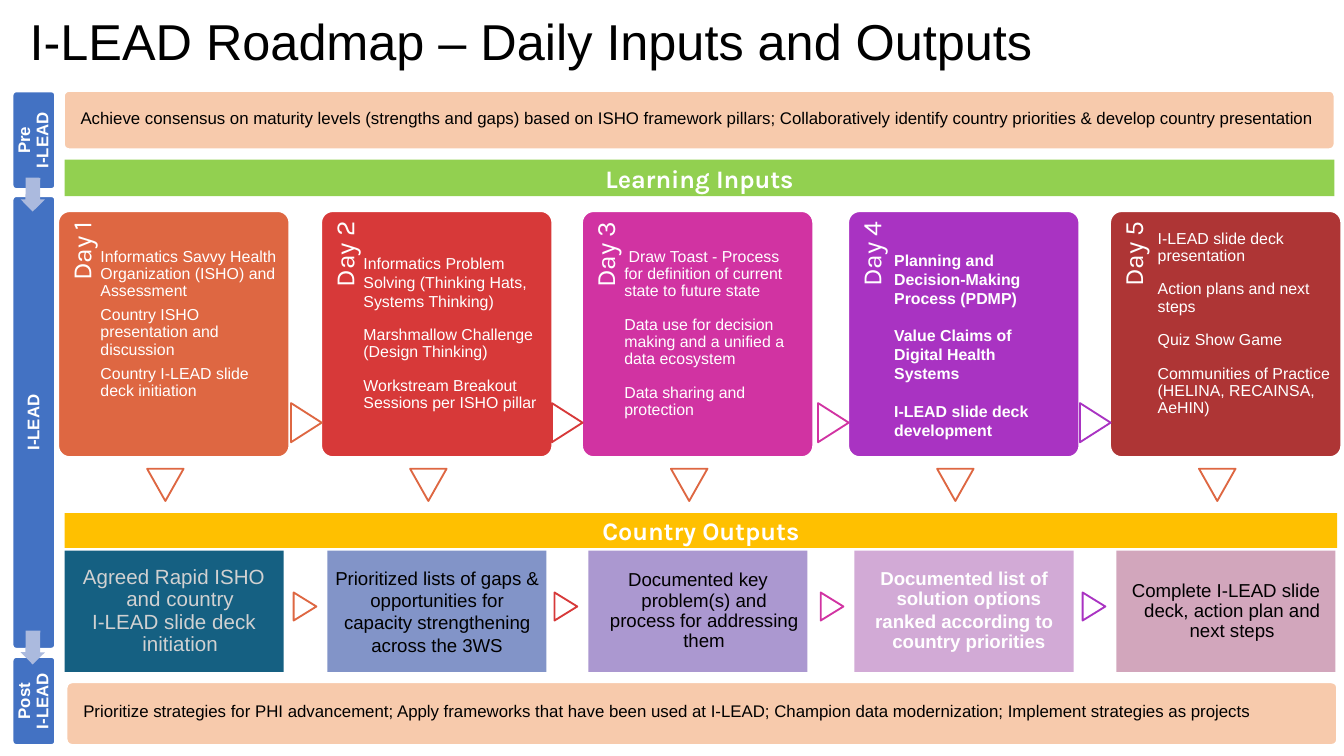
from dataclasses import dataclass

from pptx import Presentation
from pptx.dml.color import RGBColor
from pptx.enum import shapes, text
from pptx.util import Cm, Pt

WHITE = RGBColor(0xFF, 0xFF, 0xFF)
BLACK = RGBColor(0, 0, 0)
GREY = RGBColor(0xD1, 0xD1, 0xD1)
GREEN = RGBColor(0x92, 0xD0, 0x50)
GOLD = RGBColor(0xFF, 0xC0, 0x00)
PEACH = RGBColor(0xF7, 0xCA, 0xAC)
BLUE = RGBColor(0x43, 0x72, 0xC3)
PALE_BLUE = RGBColor(0xAB, 0xBA, 0xDE)
ORANGE = RGBColor(0xDE, 0x67, 0x42)
RED = RGBColor(0xD7, 0x39, 0x39)
PINK = RGBColor(0xD1, 0x33, 0xA2)
PURPLE = RGBColor(0xA9, 0x33, 0xC2)
MAROON = RGBColor(0xAE, 0x35, 0x35)
TEAL = RGBColor(0x15, 0x60, 0x82)
PERIWINKLE = RGBColor(0x82, 0x94, 0xC8)
LAVENDER = RGBColor(0xAB, 0x98, 0xD0)
LILAC = RGBColor(0xD2, 0xAA, 0xD6)
ROSE = RGBColor(0xD2, 0xA6, 0xBC)

SHAPE = shapes.MSO_SHAPE
LEFT, CENTER, RIGHT = text.PP_ALIGN.LEFT, text.PP_ALIGN.CENTER, text.PP_ALIGN.RIGHT
TOP, MIDDLE = text.MSO_ANCHOR.TOP, text.MSO_ANCHOR.MIDDLE

CARD_TOP, CARD_WIDTH, CARD_HEIGHT = 3.99, 4.37, 4.65


@dataclass
class Day:
    left: float
    color: RGBColor
    inputs: list
    inputs_offset: float
    inputs_width: float
    inputs_middle: float
    inputs_format: dict
    output_color: RGBColor
    output: list
    output_format: dict


HANGING = dict(margin=0.23, indent=-0.23)
DAYS = [
    Day(1.1, ORANGE,
        ["Informatics Savvy Health Organization (ISHO) and Assessment",
         "Country ISHO presentation and discussion",
         "Country I-LEAD slide deck initiation"],
        0.8, 3.38, 6.13, dict(gap=3.9),
        TEAL, ["Agreed Rapid ISHO and country", "I-LEAD slide deck initiation"],
        dict(size=11, color=GREY, **HANGING)),
    Day(6.07, RED,
        ["Informatics Problem Solving (Thinking Hats, Systems Thinking)",
         "Marshmallow Challenge (Design Thinking)",
         "Workstream Breakout Sessions per ISHO pillar"],
        0.8, 3.3, 6.29, dict(gap=8.8, first_spacing=1),
        PERIWINKLE,
        ["Prioritized lists of gaps & opportunities for capacity strengthening across the 3WS"],
        dict(spacing=1)),
    Day(11, PINK,
        ["Draw Toast - Process for definition of current state to future state",
         "Data use for decision making and a unified a data ecosystem",
         "Data sharing and protection"],
        0.8, 3.3, 6.31, dict(gap=8.8, first_indent=0.08),
        LAVENDER, ["Documented key problem(s) and process for addressing them"],
        HANGING),
    Day(16.03, PURPLE,
        ["Planning and Decision-Making Process (PDMP)",
         "Value Claims of Digital Health Systems",
         "I-LEAD slide deck development"],
        0.87, 2.99, 6.52, dict(gap=9.8, spacing=1, bold=True),
        LILAC, ["Documented list of solution options", "ranked according to country priorities"],
        dict(color=WHITE, bold=True, gap=1.3, margin=0.18, indent=-0.18)),
    Day(20.98, MAROON,
        ["I-LEAD slide deck presentation", "Action plans and next steps",
         "Quiz Show Game", "Communities of Practice (HELINA, RECAINSA, AeHIN)"],
        0.9, 3.33, 6.12, dict(gap=8.8),
        ROSE, ["Complete I-LEAD slide deck, action plan and next steps"],
        HANGING),
]


def write(frame, paragraphs, *, size=10, color=BLACK, font="Arial", bold=False,
          align=CENTER, anchor=MIDDLE, insets=(0, 0, 0, 0), spacing=0.9,
          first_spacing=None, gap=0, margin=0, indent=0, first_indent=None):
    """Fill a frame; insets run left, top, right, bottom in cm, gap is in points."""
    frame.word_wrap = True
    frame.auto_size = text.MSO_AUTO_SIZE.NONE
    frame.vertical_anchor = anchor
    (frame.margin_left, frame.margin_top,
     frame.margin_right, frame.margin_bottom) = map(Cm, insets)
    for i, words in enumerate(paragraphs):
        paragraph = frame.paragraphs[0] if i == 0 else frame.add_paragraph()
        first = i == 0
        hang = first_indent if first and first_indent is not None else indent
        properties = paragraph._p.get_or_add_pPr()
        properties.set("marL", str(Cm(margin)))
        properties.set("indent", str(Cm(hang)))
        paragraph.alignment = align
        paragraph.line_spacing = float(first_spacing if first and first_spacing else spacing)
        paragraph.space_before = Pt(0 if first else gap)
        run = paragraph.add_run()
        run.text = words
        run.font.name, run.font.size, run.font.bold = font, Pt(size), bold
        run.font.color.rgb = color


def add_block(slide, kind, left, top, width, height, fill, *,
              line=None, line_width=1, rotation=0, radius=None):
    block = slide.shapes.add_shape(kind, Cm(left), Cm(top), Cm(width), Cm(height))
    block.shadow.inherit = False
    block.fill.solid()
    block.fill.fore_color.rgb = fill
    if line is None:
        block.line.fill.background()
    else:
        block.line.color.rgb = line
        block.line.width = Pt(line_width)
    block.rotation = rotation
    if radius is not None:
        block.adjustments[0] = radius
    return block


def add_sideways_block(slide, left, top, width, height, fill, **look):
    """Place a rounded block, given as it stands, whose text reads upwards."""
    return add_block(slide, SHAPE.ROUNDED_RECTANGLE,
                     left + (width - height) / 2, top + (height - width) / 2,
                     height, width, fill, line=WHITE, rotation=270, **look)


def add_triangle(slide, left, top, width, height, color, rotation):
    add_block(slide, SHAPE.FLOWCHART_EXTRACT, left, top, width, height, WHITE,
              line=color, rotation=rotation)


def add_title(slide):
    title = slide.shapes.title
    title.left, title.top, title.width, title.height = map(Cm, (0.38, 0.28, 22.66, 1.19))
    write(title.text_frame, ["I-LEAD Roadmap – Daily Inputs and Outputs"],
          size=27, align=LEFT, spacing=0.8, insets=(0.18, 0.1, 0.18, 0.1))


def add_heading_bar(slide, words, top, width, height, fill):
    bar = add_block(slide, SHAPE.RECTANGLE, 1.22, top, width, height, fill)
    write(bar.text_frame, [words], size=13.5, color=WHITE, font="Karla",
          bold=True, spacing=1)


def add_goal_band(slide, words, left, top, height):
    band = add_block(slide, SHAPE.ROUNDED_RECTANGLE, left, top, 24.05, height, PEACH,
                     line=WHITE, line_width=2, radius=0.1)
    write(band.text_frame, [words], size=9, align=LEFT, insets=(0.3, 0, 0.2, 0.05))


def add_phase(slide, lines, top, height):
    phase = add_sideways_block(slide, 0.22, top, 0.84, height, BLUE,
                               line_width=2, radius=0.1)
    write(phase.text_frame, lines, size=9, color=WHITE, bold=True)


def add_day(slide, number, day):
    card = add_sideways_block(slide, day.left, CARD_TOP, CARD_WIDTH, CARD_HEIGHT,
                              day.color, radius=0.05)
    write(card.text_frame, [f"Day {number}"], size=14.2, color=WHITE, font="Karla",
          align=RIGHT, anchor=TOP, insets=(0.94, 0.13, 0.13, 2.7))

    height = 4.6
    inputs = slide.shapes.add_textbox(
        Cm(day.left + day.inputs_offset), Cm(day.inputs_middle - height / 2),
        Cm(day.inputs_width), Cm(height))
    write(inputs.text_frame, day.inputs,
          **{"size": 8.5, "color": WHITE, "align": LEFT, **day.inputs_format})

    add_triangle(slide, day.left + 1.68, 8.86, 0.69, 0.61, ORANGE, 180)
    output = add_block(slide, SHAPE.RECTANGLE, day.left + 0.12, 10.41, 4.14, 2.29,
                       day.output_color)
    write(output.text_frame, day.output, insets=(0.13,) * 4, **day.output_format)


def main():
    deck = Presentation()
    deck.slide_width, deck.slide_height = Cm(25.4), Cm(14.29)
    slide = deck.slides.add_slide(deck.slide_layouts[5])
    add_title(slide)

    for number, day in enumerate(DAYS, 1):
        add_day(slide, number, day)
    for day, following in zip(DAYS, DAYS[1:]):
        add_triangle(slide, following.left - 0.65, 7.7, 0.74, 0.58, day.color, 90)
        add_triangle(slide, following.left - 0.57, 11.25, 0.53, 0.43, day.color, 90)

    add_heading_bar(slide, "Learning Inputs", 3.02, 24, 0.69, GREEN)
    add_heading_bar(slide, "Country Outputs", 9.7, 24.05, 0.66, GOLD)
    add_goal_band(slide, "Achieve consensus on maturity levels (strengths and gaps) based on "
                  "ISHO framework pillars; Collaboratively identify country priorities & "
                  "develop country presentation", 1.19, 1.7, 1.14)
    add_goal_band(slide, "Prioritize strategies for PHI advancement; Apply frameworks that have "
                  "been used at I-LEAD; Champion data modernization; Implement strategies "
                  "as projects", 1.24, 12.88, 1.22)

    add_phase(slide, ["Pre", "I-LEAD"], 1.71, 1.88)
    add_phase(slide, ["I-LEAD"], 3.69, 8.59)
    add_phase(slide, ["Post", "I-LEAD"], 12.4, 1.7)
    for top in (3.45, 12.01):
        arrow = add_block(slide, SHAPE.RIGHT_ARROW, 0.3, top, 0.64, 0.46, PALE_BLUE,
                          rotation=90.6)
        arrow.adjustments[0] = 0.6

    deck.save("out.pptx")


if __name__ == "__main__":
    main()
